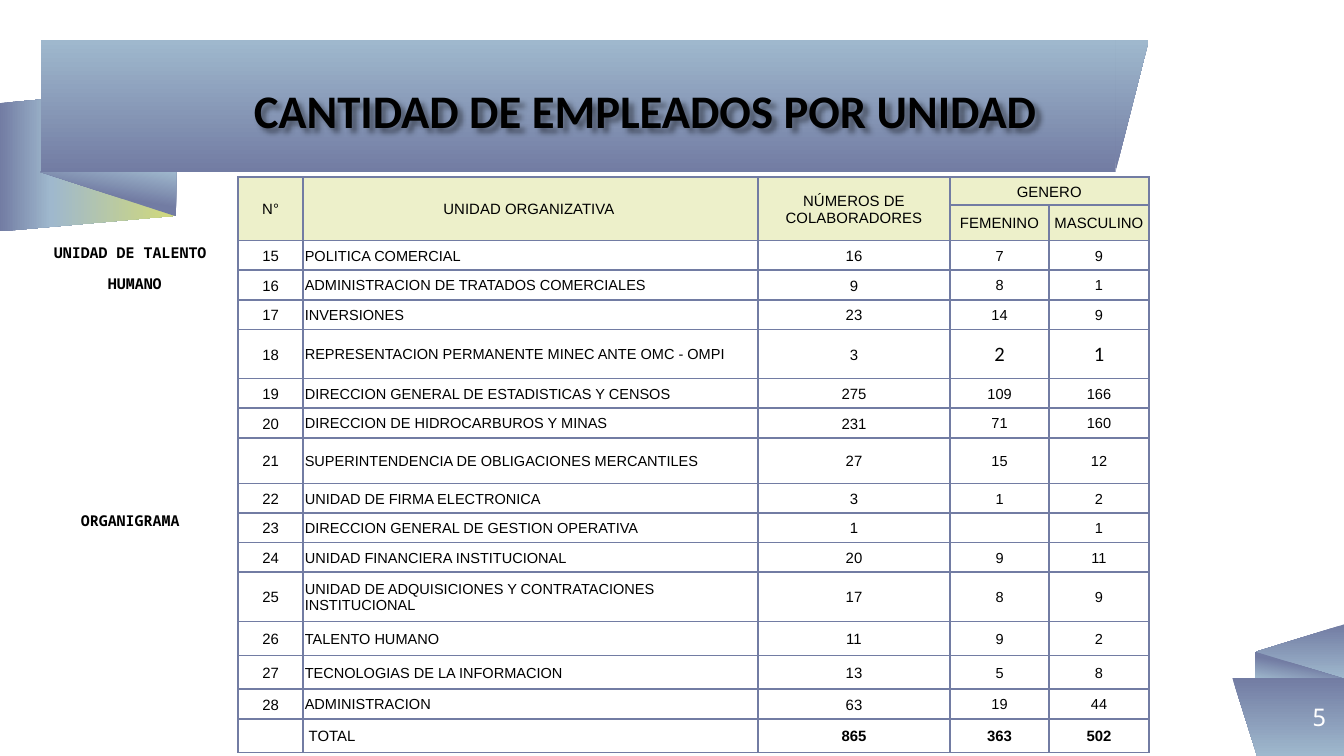
from lxml.etree import SubElement
from pptx import Presentation
from pptx.dml.color import RGBColor
from pptx.enum.shapes import MSO_SHAPE as SHAPE
from pptx.enum.text import MSO_ANCHOR as ANCHOR, PP_ALIGN as ALIGN
from pptx.oxml.ns import qn
from pptx.util import Cm, Pt

BLACK = RGBColor(0x00, 0x00, 0x00)
WHITE = RGBColor(0xFF, 0xFF, 0xFF)
CREAM = RGBColor(0xED, 0xF0, 0xCA)
INDIGO = RGBColor(0x72, 0x7C, 0xA3)
SKY = RGBColor(0x9F, 0xB8, 0xCD)
LIME = RGBColor(0xD2, 0xDA, 0x7A)

MONO = "Noto Sans Mono"
TITLE = "CANTIDAD DE EMPLEADOS POR UNIDAD"
SIDE_TEXT = [("UNIDAD DE TALENTO ", 6), ("HUMANO", 6), ("ORGANIGRAMA ", 116)]

PLAIN = [(0, INDIGO), (100, SKY)]
FOLD = [(0, INDIGO), (47, INDIGO), (100, SKY)]
TAIL = [(0, INDIGO), (29, SKY), (100, LIME)]
RIBBONS = [
    (SHAPE.PARALLELOGRAM, (0.3, 1.35, 2.72, 3.33), 270, True, 0.109, TAIL, 90),
    (SHAPE.RIGHT_TRIANGLE, (0.76, 3.25, 2.57, 0.84), 180, False, None, FOLD, 100),
    (SHAPE.RECTANGLE, (0.78, 0.76, 20.3, 2.49), 180, True, None, PLAIN, 90),
    (SHAPE.ISOSCELES_TRIANGLE, (21.08, 0.76, 0.63, 2.49), 180, False, 1, PLAIN, 90),
    (SHAPE.ISOSCELES_TRIANGLE, (24.05, 11.48, 1.04, 1.68), 270, False, 0.5, PLAIN, 180),
    (SHAPE.RIGHT_TRIANGLE, (23.72, 12.32, 1.68, 0.51), 0, False, None, FOLD, 100),
    (SHAPE.RECTANGLE, (23.75, 12.81, 1.65, 1.48), 180, False, None, PLAIN, 270),
    (SHAPE.ISOSCELES_TRIANGLE, (23.29, 12.81, 0.47, 1.48), 180, True, 1, PLAIN, 270),
]

COLUMNS = [1.23, 8.6, 3.62, 1.88, 1.88]
HEADER = [
    (0.53, ["N°", "UNIDAD ORGANIZATIVA ", "NÚMEROS DE COLABORADORES", "GENERO", None]),
    (0.64, [None, None, None, "FEMENINO", "MASCULINO"]),
]
FIRST_NUMBER = 15
UNITS = [
    (0.56, "POLITICA COMERCIAL", 16, 7, 9),
    (0.56, "ADMINISTRACION DE TRATADOS COMERCIALES", 9, 8, 1),
    (0.56, "INVERSIONES", 23, 14, 9),
    (0.93, "REPRESENTACION PERMANENTE MINEC ANTE OMC - OMPI", 3, 2, 1),
    (0.56, "DIRECCION GENERAL DE ESTADISTICAS Y CENSOS", 275, 109, 166),
    (0.56, "DIRECCION DE HIDROCARBUROS Y MINAS", 231, 71, 160),
    (0.86, "SUPERINTENDENCIA DE OBLIGACIONES MERCANTILES", 27, 15, 12),
    (0.56, "UNIDAD DE FIRMA ELECTRONICA", 3, 1, 2),
    (0.56, "DIRECCION GENERAL DE GESTION OPERATIVA", 1, None, 1),
    (0.56, "UNIDAD FINANCIERA INSTITUCIONAL", 20, 9, 11),
    (0.93, "UNIDAD DE ADQUISICIONES Y CONTRATACIONES INSTITUCIONAL", 17, 8, 9),
    (0.64, "TALENTO HUMANO", 11, 9, 2),
    (0.64, "TECNOLOGIAS DE LA INFORMACION", 13, 5, 8),
    (0.56, "ADMINISTRACION", 63, 19, 44),
]
TOTAL = (0.64, [None, " TOTAL", 865, 363, 502])
LARGE_DIGITS_UNIT = 18


def write(p, text, size=8, font="Arial", color=BLACK, bold=False, align=ALIGN.CENTER):
    p.alignment = align
    if text is None:
        SubElement(p._p, qn("a:endParaRPr"), sz=str(size * 100))
        return
    r = p.add_run()
    r.text = str(text)
    r.font.size = Pt(size)
    r.font.name = font
    r.font.bold = bold
    r.font.color.rgb = color


def set_frame(tf, anchor):
    tf.word_wrap = True
    tf.vertical_anchor = anchor
    tf.margin_left = tf.margin_right = tf.margin_top = tf.margin_bottom = 0


def add_stops(gradient, stops, angle):
    gs_list = SubElement(gradient, qn("a:gsLst"))
    for position, color in stops:
        gs = SubElement(gs_list, qn("a:gs"), pos=str(position * 1000))
        SubElement(gs, qn("a:srgbClr"), val=str(color))
    SubElement(gradient, qn("a:lin"), ang=str(angle * 60000), scaled="0")


def add_ribbon(shapes, kind, box, rotation, flip, adjust, stops, angle):
    sp = shapes.add_shape(kind, *map(Cm, box))
    sp.rotation = rotation
    if adjust is not None:
        sp.adjustments[0] = adjust
    sp.fill.gradient()
    pr = sp.element.spPr
    if flip:
        pr.find(qn("a:xfrm")).set("flipH", "1")
    gradient = pr.find(qn("a:gradFill"))
    for child in list(gradient):
        gradient.remove(child)
    add_stops(gradient, stops, angle)
    sp.line.fill.background()
    sp.shadow.inherit = False


def add_text_shadow(sp):
    sp.shadow.inherit = False
    effects = sp.element.spPr.find(qn("a:effectLst"))
    shadow = SubElement(effects, qn("a:outerShdw"), blurRad="38100", dist="38100", dir="2700000")
    color = SubElement(shadow, qn("a:srgbClr"), val=str(BLACK))
    SubElement(color, qn("a:alpha"), val="43000")


def set_borders(cell):
    pr = cell._tc.get_or_add_tcPr()
    for i, side in enumerate(("a:lnL", "a:lnR", "a:lnT", "a:lnB")):
        ln = pr.makeelement(qn(side), {"w": str(Pt(1))})
        fill = SubElement(ln, qn("a:solidFill"))
        SubElement(fill, qn("a:srgbClr"), val=str(INDIGO))
        pr.insert(i, ln)


def cell_format(row, col, last):
    if row < len(HEADER):
        return {}
    if row == last:
        return {"align": ALIGN.LEFT} if col == 1 else {"bold": col > 1}
    if col >= 3 and row - len(HEADER) + FIRST_NUMBER == LARGE_DIGITS_UNIT:
        return {"size": 11, "font": "Calibri"}
    style = {"size": 8 if col in (0, 2) else 7.8}
    if col == 1:
        style["align"] = ALIGN.LEFT
    return style if style["size"] == 8 or col == 1 else {"size": 7.8}


def add_units_table(shapes):
    units = [(h, [n, *values]) for n, (h, *values) in enumerate(UNITS, FIRST_NUMBER)]
    rows = HEADER + units + [TOTAL]
    last = len(rows) - 1
    table = shapes.add_table(len(rows), len(COLUMNS), Cm(4.5), Cm(3.35),
                             Cm(sum(COLUMNS)), Cm(sum(h for h, _ in rows))).table
    table.first_row = table.horz_banding = False
    for column, width in zip(table.columns, COLUMNS):
        column.width = Cm(width)
    for i, (height, values) in enumerate(rows):
        table.rows[i].height = Cm(height)
        for j, value in enumerate(values):
            cell = table.cell(i, j)
            cell.margin_left = cell.margin_right = cell.margin_top = Cm(0.03)
            cell.margin_bottom = 0
            cell.vertical_anchor = ANCHOR.MIDDLE
            if i < len(HEADER):
                cell.fill.solid()
                cell.fill.fore_color.rgb = CREAM
            else:
                cell.fill.background()
            set_borders(cell)
            style = {"size": 8} if value is None else cell_format(i, j, last)
            write(cell.text_frame.paragraphs[0], value, **style)
    for j in range(3):
        table.cell(0, j).merge(table.cell(1, j))
    table.cell(0, 3).merge(table.cell(0, 4))


prs = Presentation()
prs.slide_width, prs.slide_height = Cm(25.4), Cm(14.29)
slide = prs.slides.add_slide(prs.slide_layouts[5])
shapes = slide.shapes

for ribbon in RIBBONS:
    add_ribbon(shapes, *ribbon)

number = shapes.add_textbox(Cm(23.72), Cm(12.81), Cm(1.35), Cm(1.48))
set_frame(number.text_frame, ANCHOR.MIDDLE)
write(number.text_frame.paragraphs[0], "5", size=13, font=MONO, color=WHITE, align=ALIGN.RIGHT)

title = shapes.title
shapes._spTree.append(title.element)
title.left, title.top, title.width, title.height = Cm(2.69), Cm(0.89), Cm(19), Cm(2.49)
set_frame(title.text_frame, ANCHOR.MIDDLE)
p = title.text_frame.paragraphs[0]
p.line_spacing = 0.9
write(p, TITLE, size=25, font="Calibri", bold=True)
add_text_shadow(title)

add_units_table(shapes)

side = shapes.add_textbox(0, Cm(4.55), Cm(4.9), Cm(2.79))
tf = side.text_frame
set_frame(tf, ANCHOR.TOP)
for i, (text, gap) in enumerate(SIDE_TEXT):
    p = tf.add_paragraph() if i else tf.paragraphs[0]
    p.line_spacing = 1.15
    p.space_before = Pt(gap)
    p._p.get_or_add_pPr().set("marL", str(Cm(0.2)))
    write(p, text, font=MONO, bold=True)

prs.save("out.pptx")
